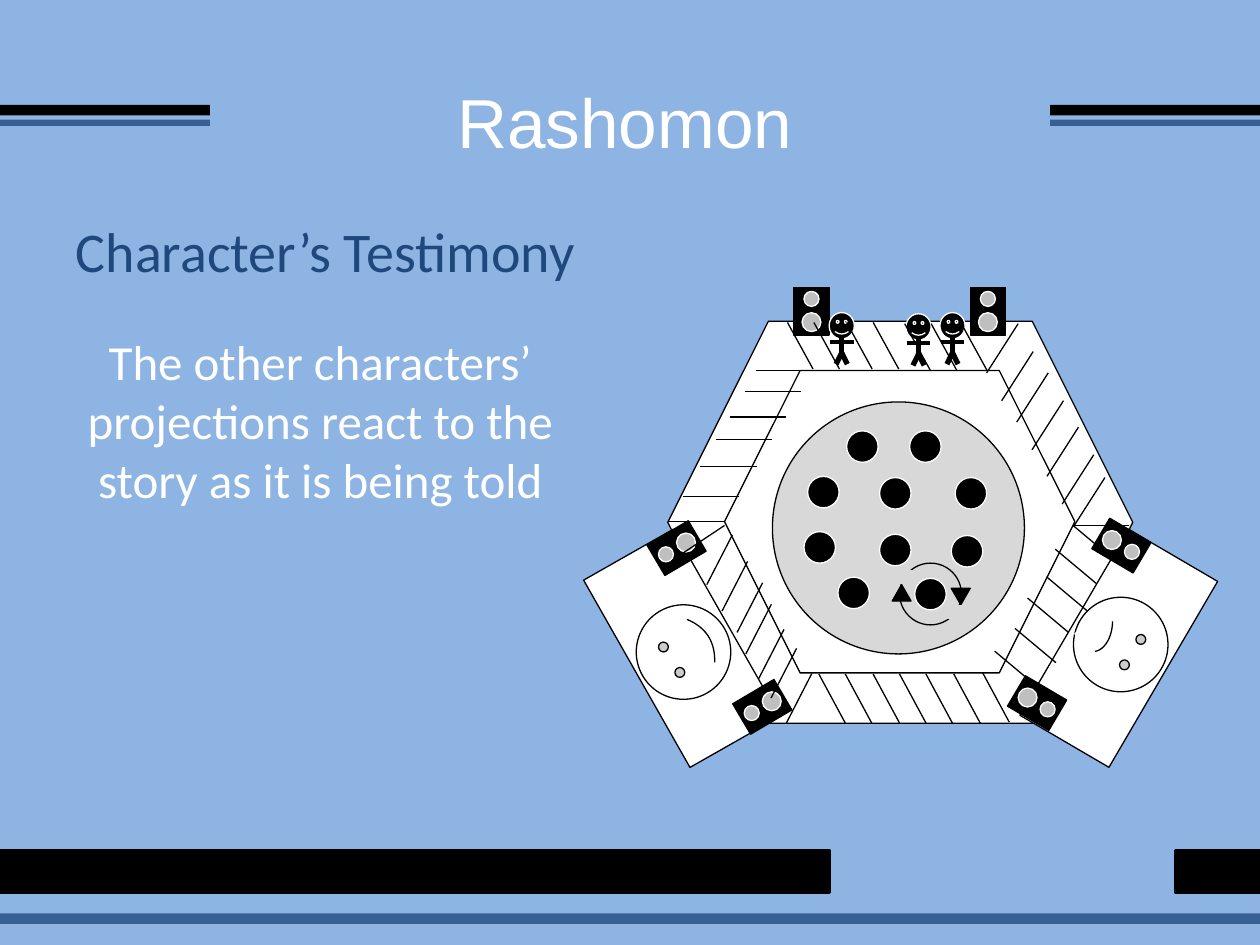
from dataclasses import dataclass
from math import cos, radians, sin
from typing import NamedTuple, Optional

from lxml.etree import SubElement
from pptx import Presentation
from pptx.dml.color import RGBColor
from pptx.enum.shapes import MSO_CONNECTOR, MSO_SHAPE
from pptx.enum.text import MSO_ANCHOR, PP_ALIGN
from pptx.oxml.ns import qn
from pptx.util import Pt


@dataclass(frozen=True)
class Theme:
    sky: str = "8EB4E3"
    steel: str = "376092"
    navy: str = "1F497D"
    black: str = "000000"
    white: str = "FFFFFF"
    disc: str = "D8D8D8"
    cone: str = "BFBFBF"
    title_pt: float = 39.6
    head_pt: float = 32
    body_pt: float = 28
    head_font: str = "Arial"
    body_font: str = "Calibri"
    thin: float = 0.75


class Box(NamedTuple):
    x: float
    y: float
    w: float
    h: float


class Speaker(NamedTuple):
    cx: float
    cy: float
    rot: float


class Person(NamedTuple):
    cx: float
    top: float


class Hatch(NamedTuple):
    dx: float
    dy: float
    starts: list


class Label(NamedTuple):
    box: Box
    text: str
    size: float
    color: str


T = Theme()
BARS = [
    (Box(0, 486, 473.8, 23.8), T.black, 2),
    (Box(671.8, 486, 48.2, 23.8), T.black, 2),
    (Box(0, 522, 720, 6), T.steel, 0),
    *[(Box(x, 68.4, 120, 3.6), T.steel, 0) for x in (0, 600)],
    *[(Box(x, 60, 120, 6), T.black, 0) for x in (0, 600)],
]
SPEAKERS = [
    Speaker(463.7, 177.8, 0), Speaker(564.5, 177.8, 0),
    Speaker(386.6, 313.2, 239.5), Speaker(435.6, 403.9, 239.5),
    Speaker(592.6, 401.8, 120.5), Speaker(640.8, 311.8, 120.5),
]
SEATS = [
    (483.8, 246.2), (519.8, 246.2), (461.5, 272.2), (502.6, 272.9), (545.8, 272.9),
    (459.4, 303.8), (502.6, 305.3), (543.6, 306), (478.8, 329.8), (522.7, 330.5),
]
PEOPLE = [Person(524.9, 179.3), Person(544.3, 178.6), Person(481, 178.6)]
HATCHES = [
    Hatch(-15.2, -28.2, [*[(x, 413.3) for x in (483.1, 498.2, 514.1, 529.2, 544.3, 560.2)],
                         (576.7, 412.6)]),
    Hatch(14.6, -28.4, [(449.3, 413.3), (440.6, 398.9), (433.4, 388.1), (426.2, 373.7),
                        (421.2, 361.4), (412.6, 349.2), (403.9, 334.1)]),
    Hatch(32.2, 0, [(381.6, 298.1), (390.2, 283.7), (400.3, 266.4), (409, 251.3),
                    (416.9, 238.3), (425.5, 223.9), (432, 211.7)]),
    Hatch(14.6, 26.6, [*[(x, 184.3) for x in (450, 465.1, 483.8, 499)],
                       *[(x, 185) for x in (517, 532.1, 549.4)]]),
    Hatch(-18, 28.1, [(581.8, 185), (590.4, 200.9), (599, 213.1), (607.7, 229),
                      (616.3, 244.1), (625, 259.9), (631.4, 272.9)]),
    Hatch(-31.7, 0, [(645.1, 300.2)]),
    Hatch(23.8, -15.8, [(390.2, 316.1)]),
    Hatch(-23.4, -19.6, [(637.2, 320.4), (626.4, 333.4), (621.4, 349.2),
                         (610.6, 361.4), (603.4, 378.7), (591.8, 391.7)]),
]
LABELS = [
    Label(Box(30, 120, 312, 46), "Character’s Testimony", T.head_pt, T.navy),
    Label(Box(42, 186, 282, 108.7),
          "The other characters’ projections react to the story as it is being told",
          T.body_pt, T.white),
]


def paint(sp, fill: Optional[str], line: Optional[str], width: float = T.thin) -> None:
    sp.shadow.inherit = False
    if fill:
        sp.fill.solid()
        sp.fill.fore_color.rgb = RGBColor.from_string(fill)
    else:
        sp.fill.background()
    if line:
        sp.line.color.rgb = RGBColor.from_string(line)
        sp.line.width = Pt(width)
    else:
        sp.line.fill.background()


def shape(shapes, kind, box: Box, fill: Optional[str], line: Optional[str] = T.black,
          rot: float = 0, width: float = T.thin) -> None:
    sp = shapes.add_shape(kind, *map(Pt, box))
    sp.rotation = rot
    paint(sp, fill, line, width)


def stroke(shapes, x: float, y: float, dx: float, dy: float, width: float = T.thin) -> None:
    ln = shapes.add_connector(MSO_CONNECTOR.STRAIGHT, Pt(x), Pt(y), Pt(x + dx), Pt(y + dy))
    ln.line.color.rgb = RGBColor.from_string(T.black)
    ln.line.width = Pt(width)
    SubElement(ln._element.spPr, qn("a:effectLst"))


def speaker(shapes, k: Speaker) -> None:
    shape(shapes, MSO_SHAPE.RECTANGLE, Box(k.cx - 10.1, k.cy - 13.7, 20.2, 27.4), T.black, rot=k.rot)
    a = radians(k.rot)
    for off, d in ((-7, 8.6), (6.3, 10.8)):
        cx, cy = k.cx - off * sin(a), k.cy + off * cos(a)
        shape(shapes, MSO_SHAPE.OVAL, Box(cx - d / 2, cy - d / 2, d, d), T.cone, T.white, k.rot)


def person(shapes, p: Person) -> None:
    shape(shapes, MSO_SHAPE.SMILEY_FACE, Box(p.cx - 7.2, p.top, 14.4, 15.1), T.black, T.white)
    stroke(shapes, p.cx, p.top + 13, 0, 10.8, 3)
    stroke(shapes, p.cx - 6.8, p.top + 16.6, 13.6, 0, 2.25)
    for dx in (3.2, -3.2):
        stroke(shapes, p.cx, p.top + 23, dx, 6.5, 3)


def curve(shapes, a, b, c, d, steps: int = 12) -> None:
    pts = []
    for i in range(steps + 1):
        t = i / steps
        weights = ((1 - t) ** 3, 3 * t * (1 - t) ** 2, 3 * t * t * (1 - t), t ** 3)
        pts.append(tuple(Pt(sum(w * q[n] for w, q in zip(weights, (a, b, c, d)))) for n in (0, 1)))
    fb = shapes.build_freeform(*pts[0])
    fb.add_line_segments(pts[1:], close=False)
    paint(fb.convert_to_shape(), None, T.black)


def write(tf, text: str, size: float, font: str, color: str) -> None:
    tf.word_wrap = True
    p = tf.paragraphs[0]
    p.alignment = PP_ALIGN.CENTER
    r = p.add_run()
    r.text = text
    r.font.size = Pt(size)
    r.font.name = font
    r.font.color.rgb = RGBColor.from_string(color)


def draw_stage(g) -> None:
    shape(g, MSO_SHAPE.HEXAGON, Box(381.6, 183.6, 265.7, 229.7), T.white, rot=180)
    shape(g, MSO_SHAPE.HEXAGON, Box(414, 211.7, 200.2, 172.8), None, rot=180)
    for x, rot in ((360, 150.4), (609.8, 210.3)):
        shape(g, MSO_SHAPE.RECTANGLE, Box(x, 308.9, 59, 123.1), T.white, rot=rot)
    for k in SPEAKERS:
        speaker(g, k)
    shape(g, MSO_SHAPE.OVAL, Box(441.4, 229.7, 144, 144), T.disc)
    for x, y in SEATS:
        shape(g, MSO_SHAPE.OVAL, Box(x, y, 18, 18), T.black, T.white)
    for p in PEOPLE:
        person(g, p)
    shape(g, MSO_SHAPE.OVAL, Box(514.1, 321.8, 35.3, 35.3), None)
    for x, y, rot in ((543.6, 336.2, 180), (509.8, 334.1, 0)):
        shape(g, MSO_SHAPE.ISOSCELES_TRIANGLE, Box(x, y, 10.8, 9.4), T.black, rot=rot)
    for gap in (Box(540, 346.3, 15.1, 7.2), Box(500.4, 326.2, 20.9, 7.2)):
        shape(g, MSO_SHAPE.RECTANGLE, gap, T.disc, T.disc)
    for x, y, rot in ((613.4, 341.3, 122.8), (363.6, 345.6, 237.2)):
        shape(g, MSO_SHAPE.SMILEY_FACE, Box(x, y, 54, 54), T.white, rot=rot)
    shape(g, MSO_SHAPE.RECTANGLE, Box(624.2, 344.9, 15.1, 31.7), T.white, T.white, 240.4)
    curve(g, (635.8, 355), (635.8, 363.6), (631.4, 371.5), (625.7, 372.2))
    for h in HATCHES:
        for x, y in h.starts:
            stroke(g, x, y, h.dx, h.dy)


def main() -> None:
    prs = Presentation()
    prs.slide_width, prs.slide_height = Pt(720), Pt(540)
    s = prs.slides.add_slide(prs.slide_layouts[5])
    s.background.fill.solid()
    s.background.fill.fore_color.rgb = RGBColor.from_string(T.sky)
    for box, color, width in BARS:
        shape(s.shapes, MSO_SHAPE.RECTANGLE, box, color, color if width else None, width=width)
    title = s.shapes.title
    title.left, title.top, title.width, title.height = map(Pt, (138, 42, 438, 54))
    title.text_frame.vertical_anchor = MSO_ANCHOR.MIDDLE
    write(title.text_frame, "Rashomon", T.title_pt, T.head_font, T.white)
    draw_stage(s.shapes.add_group_shape().shapes)
    for b in LABELS:
        tf = s.shapes.add_textbox(*map(Pt, b.box)).text_frame
        write(tf, b.text, b.size, T.body_font, b.color)
    prs.save("out.pptx")


if __name__ == "__main__":
    main()
